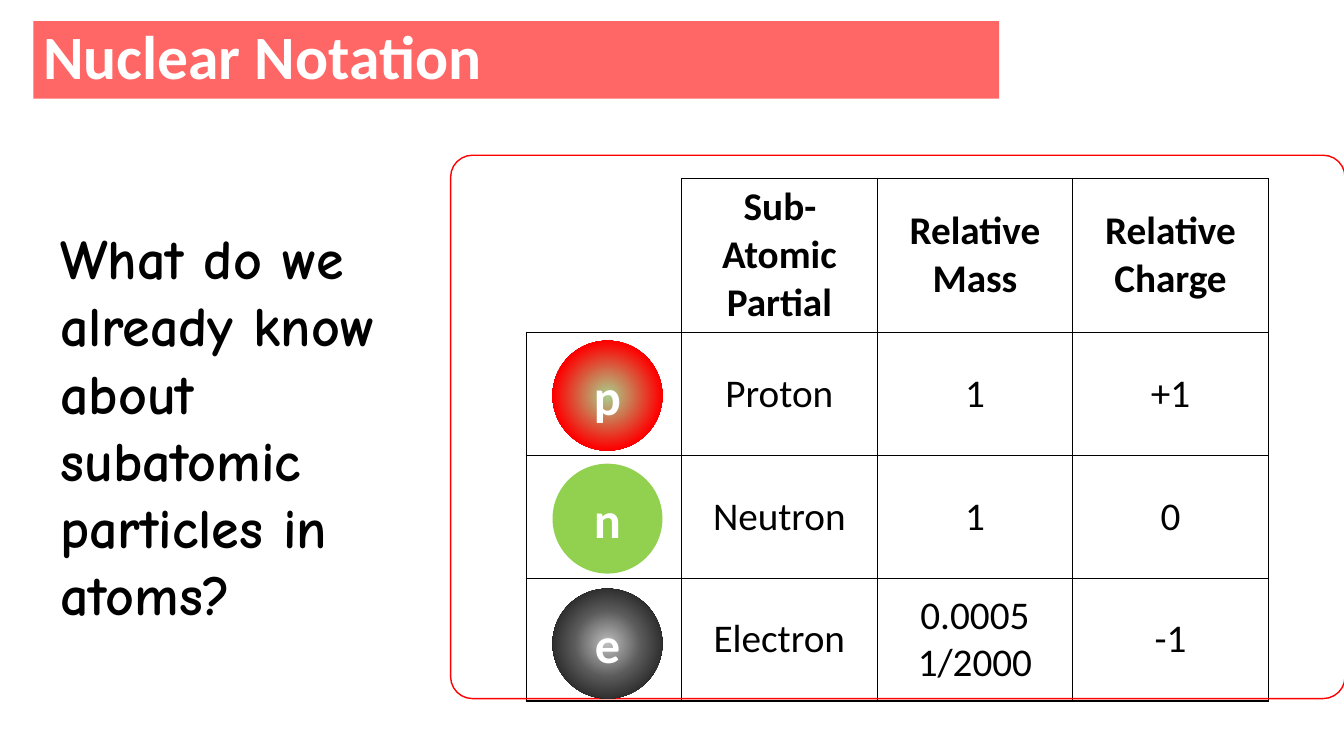
import dataclasses

import pptx
import pptx.dml.color
import pptx.enum.shapes
import pptx.enum.text
import pptx.oxml
import pptx.oxml.ns
import pptx.util

PX = 9144  # EMU per px, at 100 px to the inch
SHAPES = pptx.enum.shapes.MSO_SHAPE
ALIGN = pptx.enum.text.PP_ALIGN
ANCHOR = pptx.enum.text.MSO_ANCHOR
NAMESPACE = pptx.oxml.ns.nsdecls("a")


@dataclasses.dataclass
class Particle:
    letter: str
    cells: tuple[str, str, str]
    top: int
    colours: dict[int, str]  # stop position in percent -> colour


HEADINGS = ("Sub-Atomic Partial", "Relative Mass", "Relative Charge")
PARTICLES = (
    Particle("p", ("Proton", "1", "+1"), 338, {0: "A9D18E", 70: "FF0000", 100: "C00000"}),
    Particle("n", ("Neutron", "1", "0"), 460, {0: "92D050"}),
    Particle("e", ("Electron", "0.0005\n1/2000", "-1"), 584,
             {0: "BFBFBF", 44: "595959", 100: "000000"}),
)


def px(length: int) -> pptx.util.Emu:
    return pptx.util.Emu(length * PX)


def colour(value: str) -> pptx.dml.color.RGBColor:
    return pptx.dml.color.RGBColor.from_string(value)


def write(frame, text: str, size: int, ink: str, font: str = "Calibri",
          bold: bool = True, align=ALIGN.CENTER) -> None:
    frame.text = text
    for para in frame.paragraphs:
        para.alignment = align
        for span in para.runs:
            span.font.name = font
            span.font.size = pptx.util.Pt(size)
            span.font.bold = bold
            span.font.color.rgb = colour(ink)


def add_box(page, kind, left: int, top: int, width: int, height: int,
            fill: str = "", line: str = "", weight: float = 1):
    box = page.shapes.add_shape(kind, px(left), px(top), px(width), px(height))
    box.shadow.inherit = False
    if fill:
        box.fill.solid()
        box.fill.fore_color.rgb = colour(fill)
    else:
        box.fill.background()
    if line:
        box.line.color.rgb = colour(line)
        box.line.width = pptx.util.Pt(weight)
    else:
        box.line.fill.background()
    box.text_frame.word_wrap = True
    return box


def fill_radial(shape, stops: dict[int, str]) -> None:
    stop_list = "".join(
        f'<a:gs pos="{percent * 1000}"><a:srgbClr val="{value}"/></a:gs>'
        for percent, value in stops.items())
    gradient = pptx.oxml.parse_xml(
        f'<a:gradFill {NAMESPACE} rotWithShape="1"><a:gsLst>{stop_list}</a:gsLst>'
        '<a:path path="circle"><a:fillToRect l="50000" t="50000" r="50000" b="50000"/>'
        '</a:path></a:gradFill>')
    properties = shape.element.spPr
    properties.replace(properties.find(pptx.oxml.ns.qn("a:noFill")), gradient)


def set_borders(cell, visible: str) -> None:
    properties = cell._tc.get_or_add_tcPr()
    for side in "LRTB":
        paint = '<a:solidFill><a:srgbClr val="000000"/></a:solidFill>'
        if side not in visible:
            paint = "<a:noFill/>"
        properties.append(pptx.oxml.parse_xml(
            f'<a:ln{side} {NAMESPACE} w="12700">{paint}</a:ln{side}>'))


def add_particle_table(page) -> None:
    rows = [("", *HEADINGS)] + [("", *particle.cells) for particle in PARTICLES]
    widths = (154, 194, 194, 194)
    heights = (150, 122, 122, 122)
    table = page.shapes.add_table(len(rows), len(widths), px(522), px(177),
                                  px(sum(widths)), px(sum(heights))).table
    table.first_row = False
    table.horz_banding = False
    for column, width in zip(table.columns, widths):
        column.width = px(width)
    for r, (row, height) in enumerate(zip(rows, heights)):
        table.rows[r].height = px(height)
        for c, text in enumerate(row):
            cell = table.cell(r, c)
            set_borders(cell, "RB" if r == c == 0 else "LRTB")
            cell.fill.background()
            cell.vertical_anchor = ANCHOR.MIDDLE
            write(cell.text_frame, text, 28, "000000", bold=r == 0)


def add_particle(page, particle: Particle) -> None:
    solid = particle.colours[0] if len(particle.colours) == 1 else ""
    ball = add_box(page, SHAPES.OVAL, 548, particle.top, 109, 109, fill=solid)
    if not solid:
        fill_radial(ball, particle.colours)
    ball.text_frame.vertical_anchor = ANCHOR.MIDDLE
    write(ball.text_frame, particle.letter, 36, "FFFFFF")


def main() -> None:
    deck = pptx.Presentation()
    deck.slide_width, deck.slide_height = px(1333), px(750)
    page = deck.slides.add_slide(deck.slide_layouts[6])

    # Title bar
    title = add_box(page, SHAPES.RECTANGLE, 33, 21, 958, 77, fill="FF6666")
    title.text_frame.vertical_anchor = ANCHOR.MIDDLE
    write(title.text_frame, "Nuclear Notation", 44, "FFFFFF", align=ALIGN.LEFT)
    title.text_frame.paragraphs[0].line_spacing = 0.9

    # Question
    question = add_box(page, SHAPES.RECTANGLE, 50, 217, 358, 414,
                       fill="FFFFFF", line="FFFFFF", weight=4.5)
    question.text_frame.vertical_anchor = ANCHOR.TOP
    write(question.text_frame, "What do we already know about subatomic particles in atoms?",
          40, "000000", font="Comic Neue", align=ALIGN.LEFT)

    # Table inside its rounded frame
    add_particle_table(page)
    frame = add_box(page, SHAPES.ROUNDED_RECTANGLE, 447, 154, 887, 539, line="FF0000")
    frame.adjustments[0] = 0.04

    # Particles
    for particle in PARTICLES:
        add_particle(page, particle)

    deck.save("out.pptx")


if __name__ == "__main__":
    main()
